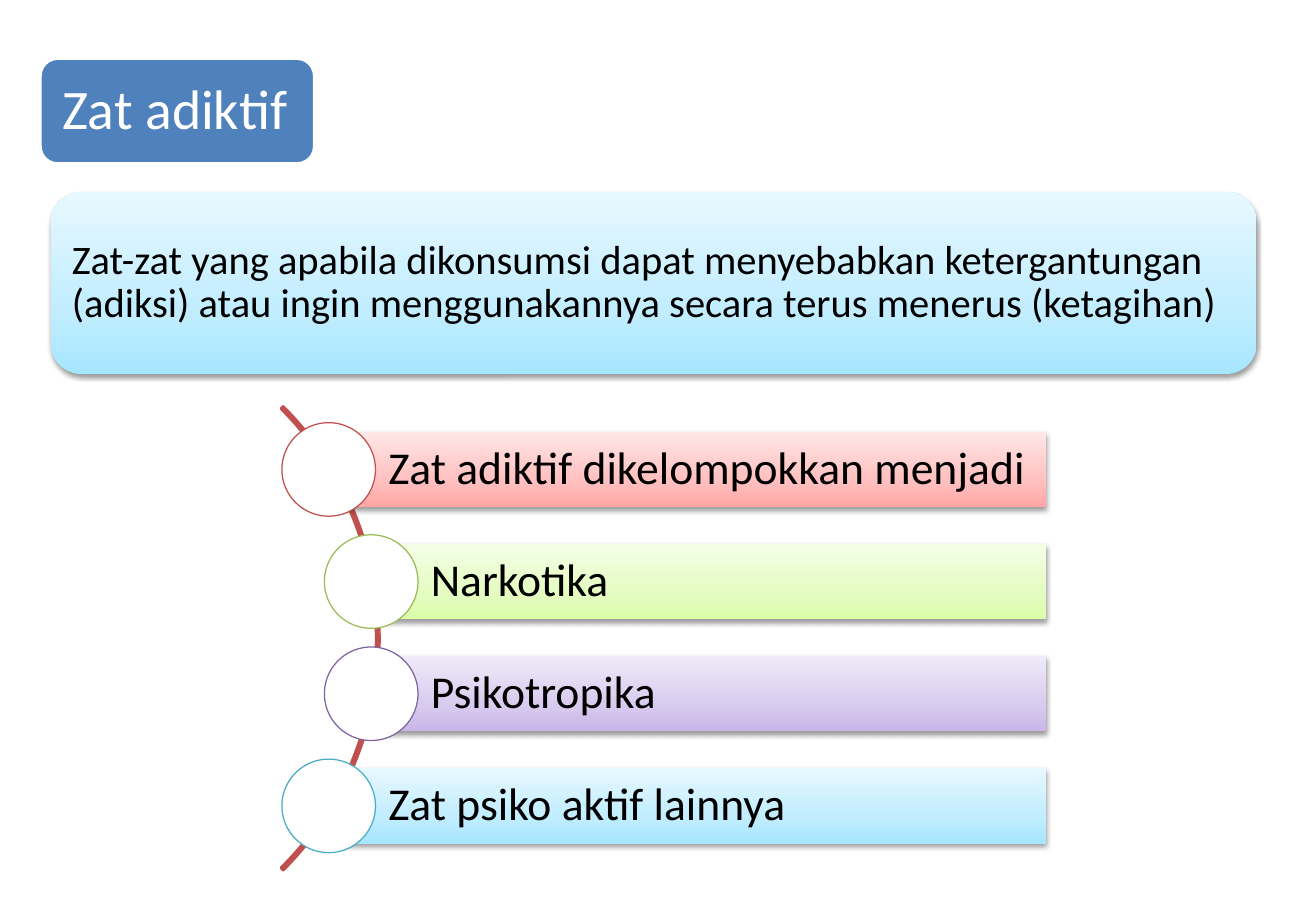
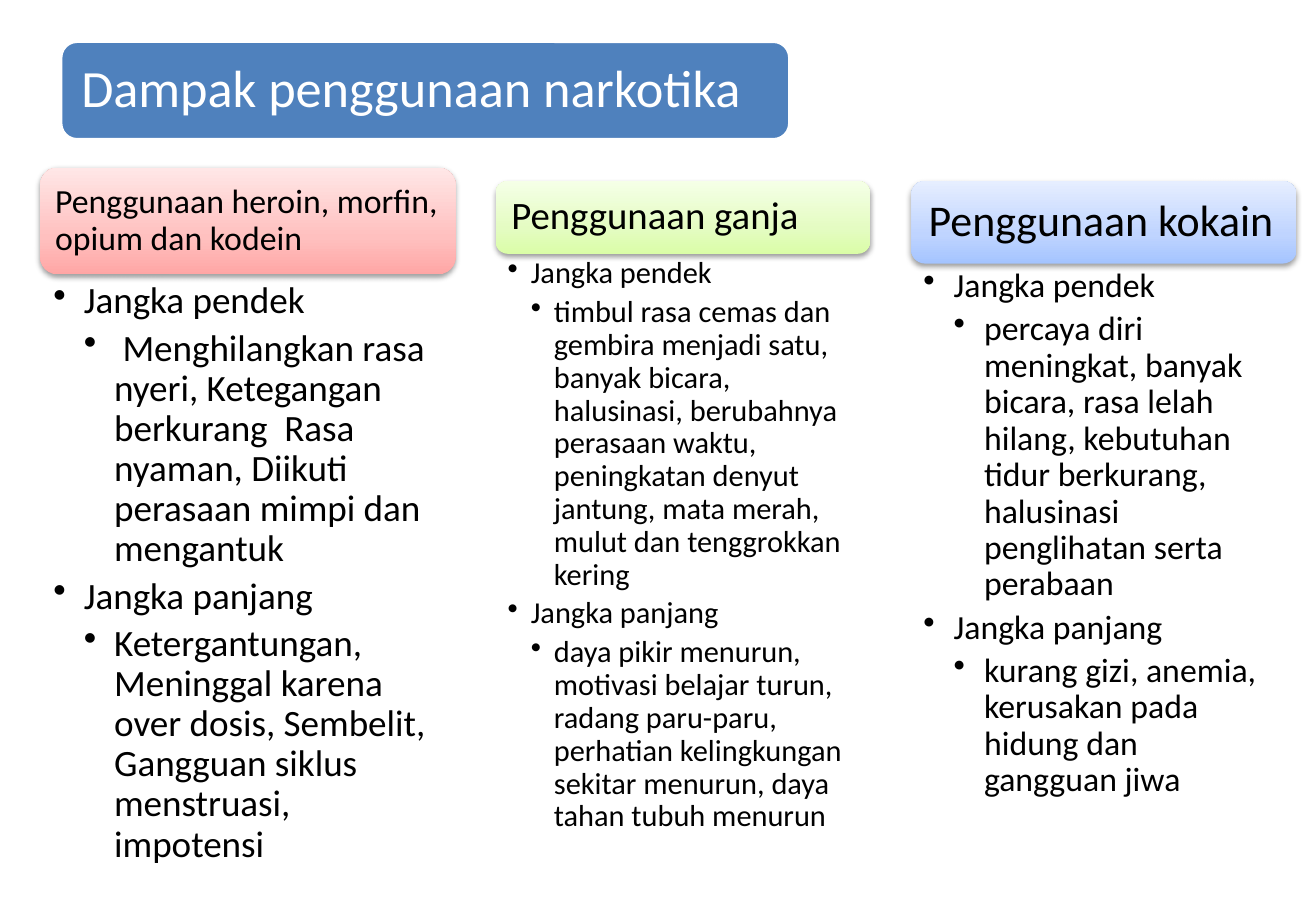
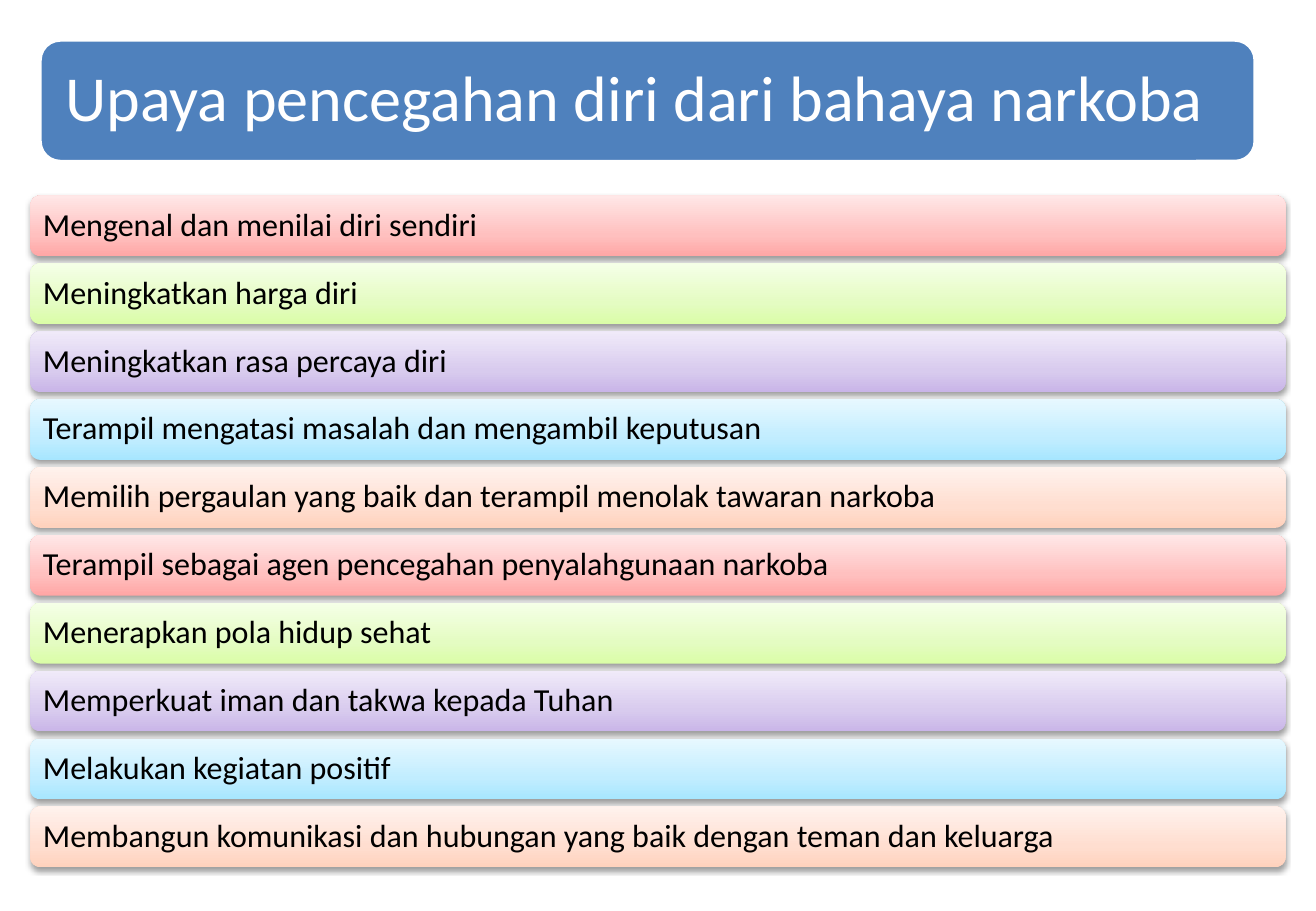
from copy import deepcopy

from lxml import etree
from pptx import Presentation
from pptx.dml.color import RGBColor
from pptx.enum.shapes import MSO_SHAPE as Preset
from pptx.enum.text import MSO_ANCHOR as Anchor, PP_ALIGN as Align
from pptx.oxml.ns import qn
from pptx.util import Inches, Pt

FONT = "Calibri"
BLACK = RGBColor(0x00, 0x00, 0x00)
WHITE = RGBColor(0xFF, 0xFF, 0xFF)
TITLE_BLUE = RGBColor(0x4F, 0x81, 0xBD)
RED = RGBColor(0xC0, 0x50, 0x4D)
GREEN = RGBColor(0x9B, 0xBB, 0x59)
PURPLE = RGBColor(0x80, 0x64, 0xA2)
AQUA = RGBColor(0x4B, 0xAC, 0xC6)

# Gradients run from the bottom edge to the top edge
STOPS = (0, 0.35, 1)
PALE_RED = (RGBColor(0xFF, 0xA6, 0xA5), RGBColor(0xFF, 0xC0, 0xBF), RGBColor(0xFF, 0xE7, 0xE7))
PALE_GREEN = (RGBColor(0xDA, 0xFD, 0xA7), RGBColor(0xE4, 0xFC, 0xC2), RGBColor(0xF5, 0xFF, 0xE7))
PALE_PURPLE = (RGBColor(0xC9, 0xB5, 0xE8), RGBColor(0xD8, 0xCB, 0xEE), RGBColor(0xF0, 0xEA, 0xF9))
PALE_AQUA = (RGBColor(0xA7, 0xE6, 0xFF), RGBColor(0xC1, 0xED, 0xFF), RGBColor(0xE7, 0xF8, 0xFF))
PALE_ORANGE = (RGBColor(0xFF, 0xD2, 0xBD), RGBColor(0xFF, 0xDE, 0xD0), RGBColor(0xFF, 0xF2, 0xED))
PALE_BLUE = (RGBColor(0xA4, 0xC4, 0xFF), RGBColor(0xBF, 0xD4, 0xFF), RGBColor(0xE6, 0xEE, 0xFF))


def add_block(slide, preset, box, fill=None, gradient=None, line=None, line_width=0.75):
    """Add a preset shape; gradient blocks also carry a soft shadow."""
    shape = slide.shapes.add_shape(preset, *map(Inches, box))
    shape.shadow.inherit = False
    if gradient:
        shape.fill.gradient()
        shape.fill.gradient_angle = 90
        properties = shape.element.spPr
        stop_list = properties.find(".//" + qn("a:gsLst"))
        stop_list.append(deepcopy(stop_list[0]))
        for stop, position, color in zip(shape.fill.gradient_stops, STOPS, gradient):
            stop.position = position
            stop.color.rgb = color
        shadow = etree.SubElement(properties.find(qn("a:effectLst")), qn("a:outerShdw"),
                                  blurRad="40000", dist="20000", dir="5400000", rotWithShape="0")
        shadow_color = etree.SubElement(shadow, qn("a:srgbClr"), val="000000")
        etree.SubElement(shadow_color, qn("a:alpha"), val="38000")
    elif fill is not None:
        shape.fill.solid()
        shape.fill.fore_color.rgb = fill
    else:
        shape.fill.background()
    if line is not None:
        shape.line.color.rgb = line
        shape.line.width = Pt(line_width)
    else:
        shape.line.fill.background()
    return shape


def write_text(shape, *texts, size, insets, color=BLACK, anchor=Anchor.MIDDLE, indent=None):
    """Write paragraphs; with an indent, they alternate between two bullet levels."""
    frame = shape.text_frame
    frame.word_wrap = True
    frame.vertical_anchor = anchor
    frame.margin_left, frame.margin_top, frame.margin_right, frame.margin_bottom = map(Inches, insets)
    for index, text in enumerate(texts):
        paragraph = frame.paragraphs[0] if index == 0 else frame.add_paragraph()
        paragraph.alignment = Align.LEFT
        paragraph.line_spacing = 0.9
        run = paragraph.add_run()
        run.text = text
        run.font.name = FONT
        run.font.size = Pt(size)
        run.font.color.rgb = color
        if indent:
            paragraph.level = index % 2
            paragraph.space_after = Pt(size * 0.2)
            properties = paragraph._p.get_or_add_pPr()
            properties.set("marL", str(Inches(indent * (paragraph.level + 1))))
            properties.set("indent", str(Inches(-indent)))
            etree.SubElement(properties, qn("a:buChar"), char="•")


presentation = Presentation()
presentation.slide_width = Inches(10.83)
presentation.slide_height = Inches(7.5)

# Slides with their title bands
TITLES = [
    ("Zat adiktif", (0.33, 0.48, 2.26, 0.87), 33, 0.14),
    ("Dampak penggunaan narkotika", (0.5, 0.34, 6, 0.81), 31, 0.13),
    ("Upaya pencegahan diri dari bahaya narkoba", (0.33, 0.33, 10, 1), 38, 0.16),
]
slides = []
for title, box, size, inset in TITLES:
    slide = presentation.slides.add_slide(presentation.slide_layouts[6])
    band = add_block(slide, Preset.ROUNDED_RECTANGLE, box, fill=TITLE_BLUE, line=WHITE, line_width=2)
    write_text(band, title, size=size, insets=[inset] * 4, color=WHITE)
    slides.append(slide)
substance_slide, impact_slide, prevention_slide = slides

# Slide 1: definition
definition = add_block(substance_slide, Preset.ROUNDED_RECTANGLE, (0.42, 1.58, 9.92, 1.5),
                       gradient=PALE_AQUA)
write_text(definition,
           "Zat-zat yang apabila dikonsumsi dapat menyebabkan ketergantungan (adiksi) "
           "atau ingin menggunakannya secara terus menerus (ketagihan)",
           size=24, insets=[0.1] * 4)

# Slide 1: groups along an arc
arc = add_block(substance_slide, Preset.BLOCK_ARC, (-2.27, 2.56, 5.39, 5.39), line=RED, line_width=2)
for index, value in enumerate((189, 27, 0.004)):
    arc.adjustments[index] = value

GROUPS = [
    ("Zat adiktif dikelompokkan menjadi", 2.32, PALE_RED, RED),
    ("Narkotika", 2.67, PALE_GREEN, GREEN),
    ("Psikotropika", 2.67, PALE_PURPLE, PURPLE),
    ("Zat psiko aktif lainnya", 2.32, PALE_AQUA, AQUA),
]
CIRCLE, BAR_HEIGHT, BAR_RIGHT = 0.77, 0.62, 8.61
FIRST_CIRCLE, LAST_CIRCLE = 3.48, 6.25
circle_step = (LAST_CIRCLE - FIRST_CIRCLE) / (len(GROUPS) - 1)
for index, (text, left, gradient, outline) in enumerate(GROUPS):
    top = FIRST_CIRCLE + index * circle_step
    bar_left = left + CIRCLE / 2
    bar_top = top + (CIRCLE - BAR_HEIGHT) / 2
    bar = add_block(substance_slide, Preset.RECTANGLE,
                    (bar_left, bar_top, BAR_RIGHT - bar_left, BAR_HEIGHT), gradient=gradient)
    write_text(bar, text, size=27, insets=(0.49, 0.07, 0.07, 0.07))
    add_block(substance_slide, Preset.OVAL, (left, top, CIRCLE, CIRCLE), fill=WHITE, line=outline)

# Slide 2: one column per drug: heading box, size, inset; then list height, size, insets, indent
SHORT_TERM, LONG_TERM = "Jangka pendek", "Jangka panjang"
COLUMNS = [
    ("Penggunaan heroin, morfin, opium dan kodein", PALE_RED,
     (0.33, 1.38, 3.42, 0.88), 20, 0.08,
     2.28, 5.07, 22, (0.11, 0.04, 0.22, 0.04), 0.25,
     " Menghilangkan rasa nyeri, Ketegangan berkurang  Rasa nyaman, Diikuti perasaan mimpi "
     "dan mengantuk",
     "Ketergantungan, Meninggal karena over dosis, Sembelit, Gangguan siklus menstruasi, impotensi"),
    ("Penggunaan ganja", PALE_GREEN,
     (4.08, 1.49, 3.08, 0.6), 23, 0.1,
     2.09, 5, 18, (0.1, 0.03, 0.18, 0.03), 0.19,
     "timbul rasa cemas dan gembira menjadi satu, banyak bicara, halusinasi, berubahnya perasaan "
     "waktu, peningkatan denyut jantung, mata merah, mulut dan tenggrokkan kering",
     "daya pikir menurun, motivasi belajar turun, radang paru-paru, perhatian kelingkungan sekitar "
     "menurun, daya tahan tubuh menurun"),
    ("Penggunaan kokain", PALE_BLUE,
     (7.5, 1.49, 3.17, 0.68), 26, 0.11,
     2.17, 4.59, 20, (0.1, 0.04, 0.2, 0.04), 0.25,
     "percaya diri meningkat, banyak bicara, rasa lelah hilang, kebutuhan tidur berkurang, "
     "halusinasi penglihatan serta perabaan",
     "kurang gizi, anemia, kerusakan pada hidung dan gangguan jiwa"),
]
for (heading, gradient, box, heading_size, inset, list_top, list_height, list_size,
     list_insets, indent, short_effects, long_effects) in COLUMNS:
    header = add_block(impact_slide, Preset.ROUNDED_RECTANGLE, box, gradient=gradient)
    write_text(header, heading, size=heading_size, insets=[inset] * 4)
    left, _, width, _ = box
    effects = impact_slide.shapes.add_textbox(*map(Inches, (left, list_top, width, list_height)))
    write_text(effects, SHORT_TERM, short_effects, LONG_TERM, long_effects,
               size=list_size, insets=list_insets, anchor=Anchor.TOP, indent=indent)

# Slide 3: ten prevention bars in five repeating colours
EFFORTS = [
    "Mengenal dan menilai diri sendiri",
    "Meningkatkan harga diri",
    "Meningkatkan rasa percaya diri",
    "Terampil mengatasi masalah dan mengambil keputusan",
    "Memilih pergaulan yang baik dan terampil menolak tawaran narkoba",
    "Terampil sebagai agen pencegahan penyalahgunaan narkoba",
    "Menerapkan pola hidup sehat",
    "Memperkuat iman dan takwa kepada Tuhan",
    "Melakukan kegiatan positif",
    "Membangun komunikasi dan hubungan yang baik dengan teman dan keluarga",
]
BAR_GRADIENTS = (PALE_RED, PALE_GREEN, PALE_PURPLE, PALE_AQUA, PALE_ORANGE)
FIRST_BAR, LAST_BAR = 1.61, 6.64
bar_step = (LAST_BAR - FIRST_BAR) / (len(EFFORTS) - 1)
for index, effort in enumerate(EFFORTS):
    bar = add_block(prevention_slide, Preset.ROUNDED_RECTANGLE,
                    (0.25, FIRST_BAR + index * bar_step, 10.33, 0.5),
                    gradient=BAR_GRADIENTS[index % len(BAR_GRADIENTS)])
    write_text(bar, effort, size=19, insets=[0.08] * 4)

presentation.save("out.pptx")
